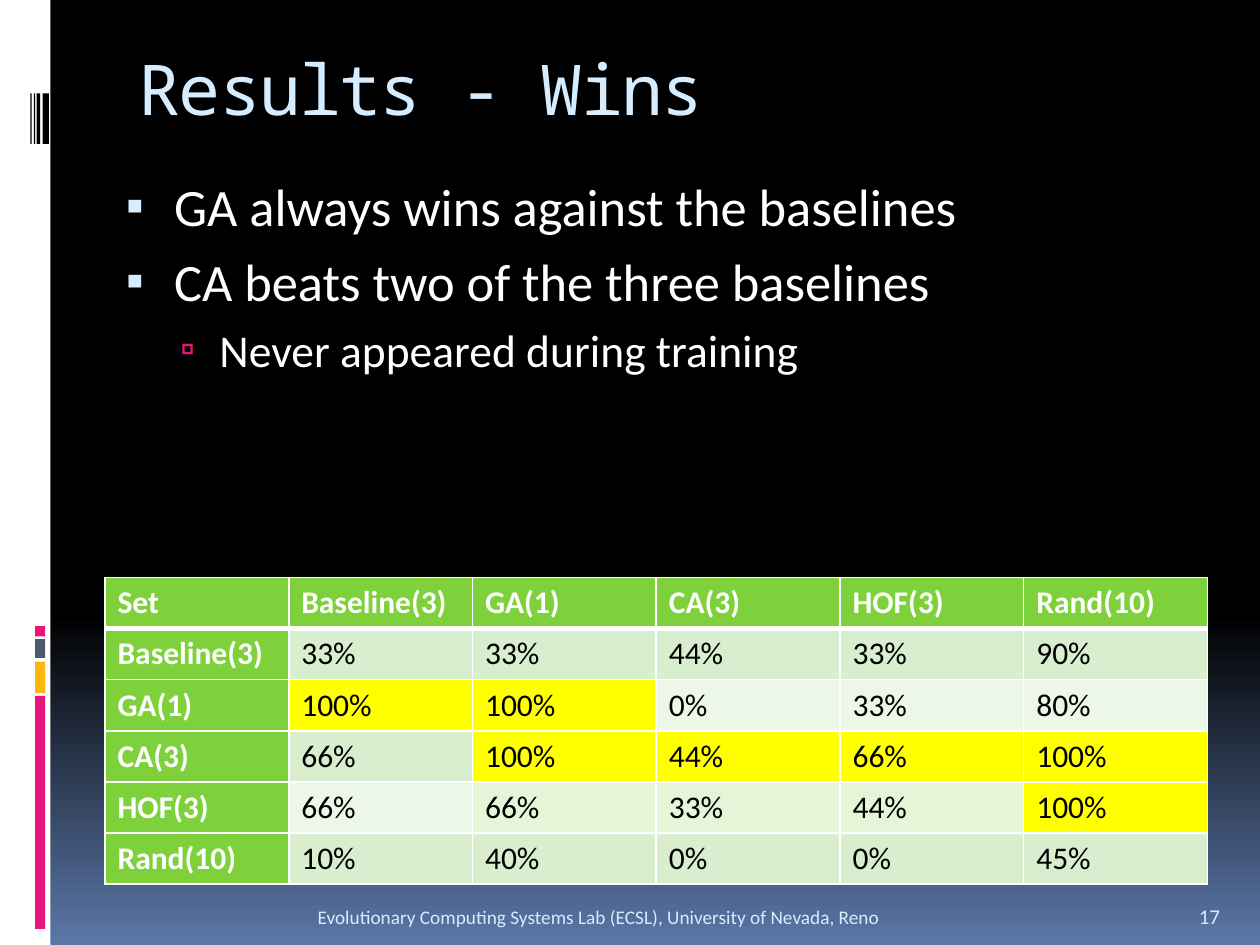
from dataclasses import dataclass

from lxml.etree import SubElement
from pptx import Presentation
from pptx.dml.color import RGBColor
from pptx.enum.shapes import MSO_SHAPE
from pptx.enum.text import MSO_ANCHOR, PP_ALIGN
from pptx.oxml.ns import qn
from pptx.util import Pt


@dataclass(frozen=True)
class Theme:
    sans: str = "Calibri"
    mono: str = "Noto Sans Mono"
    white: str = "FFFFFF"
    black: str = "000000"
    sky: str = "D6ECFF"
    blue: str = "5B77A8"
    pink: str = "EA157A"
    gold: str = "FEB80A"
    slate: str = "4E5B6F"
    green: str = "7FD13B"
    bands: tuple = ("D8EECE", "ECF7E8")
    pale: str = "E5F6D8"
    mark: str = "FFFF00"
    title: int = 40
    body: int = 30
    sub: int = 26
    cell: int = 18
    number: int = 12
    foot: int = 11


T = Theme()
SETS = ["Baseline(3)", "GA(1)", "CA(3)", "HOF(3)", "Rand(10)"]
WINS = [
    [33, 33, 44, 33, 90],
    [100, 100, 0, 33, 80],
    [66, 100, 44, 66, 100],
    [66, 66, 33, 44, 100],
    [10, 40, 0, 0, 45],
]
# Highlighted wins, as (row, column) of WINS
BEST = {(1, 0), (1, 1), (2, 1), (2, 2), (2, 3), (2, 4), (3, 4)}


def rgb(color):
    return RGBColor.from_string(color)


def style(para, size, color, face=T.sans, bold=False):
    font = para.font
    font.name, font.size, font.bold = face, Pt(size), bold
    font.color.rgb = rgb(color)


def place(shape, box):
    shape.left, shape.top, shape.width, shape.height = map(Pt, box)


def backdrop(slide):
    fill = slide.background.fill
    fill.gradient()
    fill.gradient_angle = 270
    for stop, at, color in zip(fill.gradient_stops, (0.65, 1), (T.black, T.blue)):
        stop.position = at
        stop.color.rgb = rgb(color)


def bar(slide, box, color):
    shape = slide.shapes.add_shape(MSO_SHAPE.RECTANGLE, *map(Pt, box))
    shape.shadow.inherit = False
    shape.fill.solid()
    shape.fill.fore_color.rgb = rgb(color)
    shape.line.fill.background()


def side(slide, box):
    left, top, width, height = box
    bar(slide, box, T.white)
    # Colour blocks, as top and height
    for y, high, color in [(397.6, 133.2, T.pink), (378, 18, T.gold),
                           (365.2, 10.8, T.slate), (357.8, 5.8, T.pink)]:
        bar(slide, (left + 20, top + y, 5.8, high), color)
    # Black stripes, as left and width
    for x, wide in [(24.4, 3.6), (20.9, 2), (19.4, 0.7), (17.4, 0.7)]:
        bar(slide, (left + x, top + 53.4, wide, 28.8), T.black)


def heading(slide, box, text):
    shape = slide.shapes.title
    place(shape, box)
    frame = shape.text_frame
    frame.text = text
    frame.vertical_anchor = MSO_ANCHOR.TOP
    frame.margin_top = Pt(2)
    para = frame.paragraphs[0]
    para.alignment = PP_ALIGN.LEFT
    style(para, T.title, T.sky, T.mono)
    para.runs[0].font._element.set("spc", "-100")


def bullet(para, mark, color, scale, left, hang):
    props = para._p.get_or_add_pPr()
    props.set("marL", str(Pt(left)))
    props.set("indent", str(-Pt(hang)))
    tint = SubElement(props, qn("a:buClr"))
    SubElement(tint, qn("a:srgbClr"), val=color)
    SubElement(props, qn("a:buSzPct"), val=str(scale * 1000))
    SubElement(props, qn("a:buFont"), typeface=T.sans)
    SubElement(props, qn("a:buChar"), char=mark)


def points(slide, box, items):
    frame = slide.shapes.add_textbox(*map(Pt, box)).text_frame
    frame.word_wrap = True
    for i, (level, text) in enumerate(items):
        para = frame.paragraphs[0] if i == 0 else frame.add_paragraph()
        para.text, para.level = text, level
        if i:
            para.space_before = Pt(5.2 if level else 7)
        if level:
            bullet(para, "▫", T.pink, 90, 58.3, 22.3)
        else:
            bullet(para, "▪", T.sky, 95, 32.4, 27.4)
        style(para, T.sub if level else T.body, T.white)


def edge(cell, name, width):
    line = SubElement(cell._tc.get_or_add_tcPr(), qn("a:" + name), w=str(Pt(width)))
    fill = SubElement(line, qn("a:solidFill"))
    SubElement(fill, qn("a:srgbClr"), val=T.white)


def shade(row, col):
    if row == 0 or col == 0:
        return T.green
    if (row - 1, col - 1) in BEST:
        return T.mark
    if row == 4 and col > 1:
        return T.pale
    return T.bands[(row - 1) % 2]


def grid(slide, box):
    data = [["Set"] + SETS]
    data += [[name] + [f"{n}%" for n in nums] for name, nums in zip(SETS, WINS)]
    rows, cols = len(data), len(data[0])
    table = slide.shapes.add_table(rows, cols, *map(Pt, box)).table
    table.first_col, table.horz_banding = True, False
    for col in table.columns:
        col.width = Pt(box[2] / cols)
    for r, texts in enumerate(data):
        table.rows[r].height = Pt(box[3] / rows)
        for c, text in enumerate(texts):
            cell = table.cell(r, c)
            cell.text = text
            head = r == 0 or c == 0
            style(cell.text_frame.paragraphs[0], T.cell,
                  T.white if head else T.black, bold=head)
            edge(cell, "lnL", 1)
            edge(cell, "lnR", 1)
            edge(cell, "lnT", 3 if r == 1 else 1)
            edge(cell, "lnB", 3 if r == 0 else 1)
            cell.fill.solid()
            cell.fill.fore_color.rgb = rgb(shade(r, c))


def note(slide, box, text, size, align):
    frame = slide.shapes.add_textbox(*map(Pt, box)).text_frame
    frame.word_wrap = True
    frame.vertical_anchor = MSO_ANCHOR.BOTTOM
    para = frame.paragraphs[0]
    para.text, para.alignment = text, align
    style(para, size, T.sky)


def footer(slide, box):
    left, top, width, height = box
    note(slide, (left, top, 437.8, height),
         "Evolutionary Computing Systems Lab (ECSL), University of Nevada, Reno",
         T.foot, PP_ALIGN.RIGHT)
    note(slide, (left + width - 36, top, 36, height), "17", T.number, PP_ALIGN.LEFT)


def main():
    deck = Presentation()
    deck.slide_width, deck.slide_height = Pt(720), Pt(540)
    slide = deck.slides.add_slide(deck.slide_layouts[5])
    backdrop(slide)
    side(slide, (0, 0, 28.8, 540))
    heading(slide, (72, 24, 612, 72), "Results - Wins")
    footer(slide, (72, 505.4, 642, 28.8))
    grid(slide, (60, 330, 630, 175.2))
    points(slide, (60, 96, 630, 120), [
        (0, "GA always wins against the baselines"),
        (0, "CA beats two of the three baselines"),
        (1, "Never appeared during training"),
    ])
    deck.save("out.pptx")


if __name__ == "__main__":
    main()
